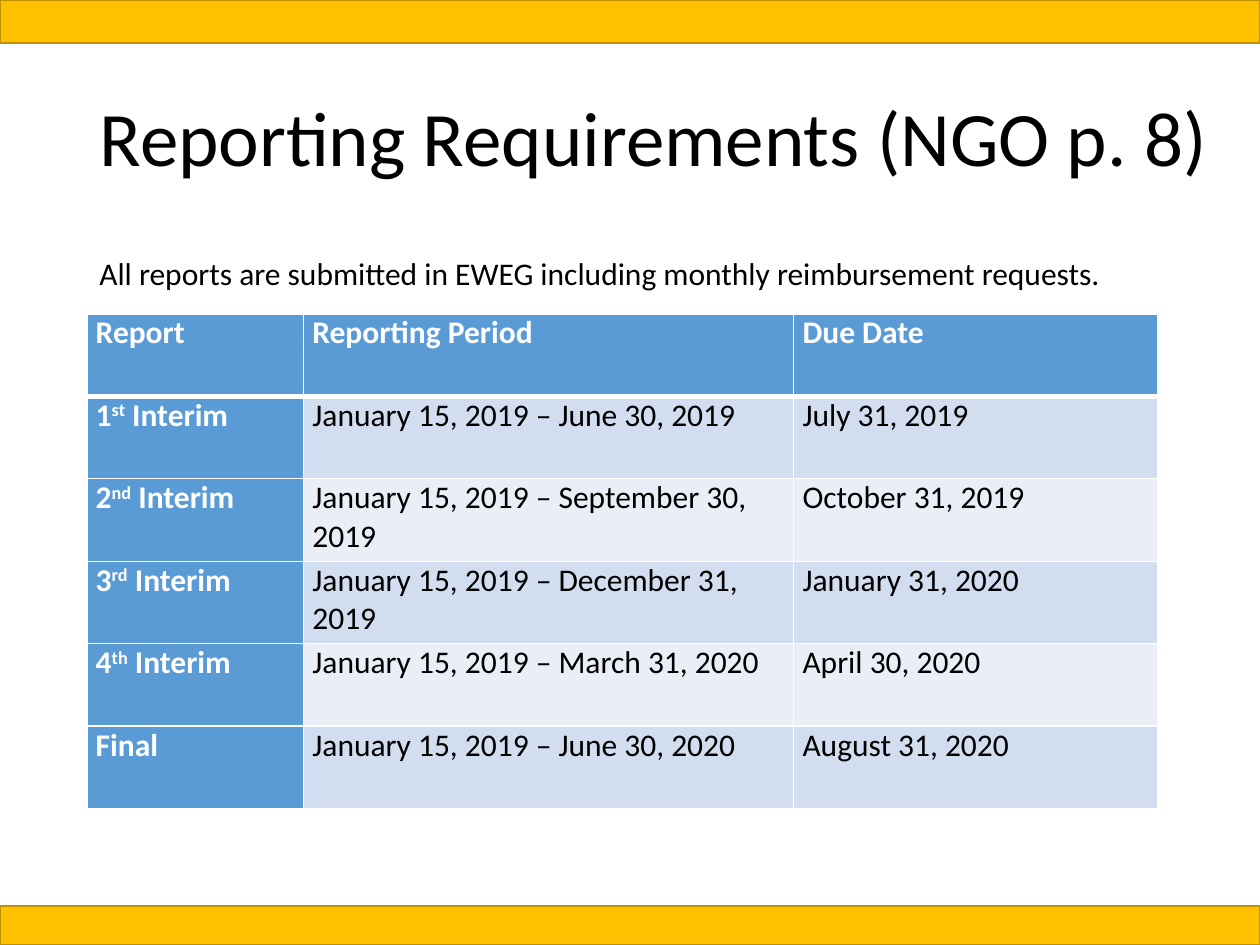
import pptx
import pptx.util
from lxml import etree
from pptx.dml.color import RGBColor
from pptx.enum.shapes import MSO_SHAPE
from pptx.enum.text import MSO_ANCHOR, MSO_AUTO_SIZE, PP_ALIGN
from pptx.oxml.ns import qn

TITLE = "Reporting Requirements (NGO p. 8)"
INTRO = "All reports are submitted in EWEG including monthly reimbursement requests."
HEADINGS = ("Report", "Reporting Period", "Due Date")
# (report name as number, ordinal suffix, rest), period end, due date
REPORTS = [
    (("1", "st", " Interim"), "June 30, 2019", "July 31, 2019"),
    (("2", "nd", " Interim"), "September 30, 2019", "October 31, 2019"),
    (("3", "rd", " Interim"), "December 31, 2019", "January 31, 2020"),
    (("4", "th", " Interim"), "March 31, 2020", "April 30, 2020"),
    (("Final",), "June 30, 2020", "August 31, 2020"),
]
PERIOD_START = "January 15, 2019"

THEME = {
    "font": "Calibri", "title_size": 44, "body_size": 18,
    "text": "000000", "light": "FFFFFF",
    "band": "FFC000", "band_line": "BF9000",
    "header": "5B9BD5", "stripes": ("D2DEEF", "EAEFF7"),
}
SLIDE_W, SLIDE_H = 10, 7.5
MARGIN = 0.69
BANDS = [(0, 0.34), (SLIDE_H - 0.31, 0.31)]  # top, height
COLUMNS = (1.72, 3.89, 2.89)
ROW_H = 0.655
SUPERSCRIPT = "30000"


def inches(*values):
    return [pptx.util.Inches(value) for value in values]


def color(name):
    return RGBColor.from_string(THEME.get(name, name))


def add_run(paragraph, text, size="body_size", ink="text", bold=False):
    run = paragraph.add_run()
    run.text = text
    run.font.color.rgb = color(ink)
    settings = {"name": THEME["font"], "size": pptx.util.Pt(THEME[size]), "bold": bold}
    for key, value in settings.items():
        setattr(run.font, key, value)
    return run


def add_band(slide, top, height):
    band = slide.shapes.add_shape(MSO_SHAPE.RECTANGLE, *inches(0, top, SLIDE_W, height))
    band.shadow.inherit = False
    band.fill.solid()
    band.fill.fore_color.rgb = color("band")
    band.line.color.rgb = color("band_line")
    band.line.width = pptx.util.Pt(1)


def set_borders(cell, row):
    """White rules, thicker between the heading row and the body."""
    widths = {"lnL": 1, "lnR": 1, "lnT": 3 if row == 1 else 1, "lnB": 3 if row == 0 else 1}
    properties = cell._tc.get_or_add_tcPr()
    for side, width in widths.items():
        line = etree.SubElement(properties, qn(f"a:{side}"), w=str(pptx.util.Pt(width)))
        fill = etree.SubElement(line, qn("a:solidFill"))
        etree.SubElement(fill, qn("a:srgbClr"), val=THEME["light"])


def fill_cell(cell, row, column, parts):
    heading = row == 0 or column == 0
    set_borders(cell, row)
    cell.fill.solid()
    cell.fill.fore_color.rgb = color("header" if heading else THEME["stripes"][(row - 1) % 2])
    margins = {"margin_left": 0.07, "margin_right": 0.07, "margin_top": 0, "margin_bottom": 0}
    for side, value in margins.items():
        setattr(cell, side, pptx.util.Inches(value))
    for index, part in enumerate(parts):
        run = add_run(cell.text_frame.paragraphs[0], part,
                      ink="light" if heading else "text", bold=heading)
        if index == 1:
            run.font._element.set("baseline", SUPERSCRIPT)


def add_schedule(slide):
    rows = [[(heading,) for heading in HEADINGS]]
    rows += [[name, (f"{PERIOD_START} – {end}",), (due,)] for name, end, due in REPORTS]
    table = slide.shapes.add_table(
        len(rows), len(COLUMNS),
        *inches(MARGIN, 2.49, sum(COLUMNS), ROW_H * len(rows))).table
    for column, width in zip(table.columns, COLUMNS):
        column.width = pptx.util.Inches(width)
    for r, row in enumerate(rows):
        table.rows[r].height = pptx.util.Inches(ROW_H)
        for c, parts in enumerate(row):
            fill_cell(table.cell(r, c), r, c, parts)


def main():
    deck = pptx.Presentation()
    deck.slide_width, deck.slide_height = inches(SLIDE_W, SLIDE_H)
    slide = deck.slides.add_slide(deck.slide_layouts.get_by_name("Title Only"))
    for top, height in BANDS:
        add_band(slide, top, height)

    title = slide.shapes.title
    title.left, title.top, title.width, title.height = inches(MARGIN, 0.4, 9.08, 1.45)
    title.text_frame.auto_size = MSO_AUTO_SIZE.NONE
    title.text_frame.vertical_anchor = MSO_ANCHOR.MIDDLE
    heading = title.text_frame.paragraphs[0]
    heading.alignment = PP_ALIGN.LEFT
    heading.line_spacing = 0.9
    add_run(heading, TITLE, size="title_size")

    add_schedule(slide)

    intro = slide.shapes.add_textbox(*inches(MARGIN, 1.97, sum(COLUMNS), 0.4)).text_frame
    intro.word_wrap = True
    intro.auto_size = MSO_AUTO_SIZE.SHAPE_TO_FIT_TEXT
    add_run(intro.paragraphs[0], INTRO)

    deck.save("out.pptx")


if __name__ == "__main__":
    main()
